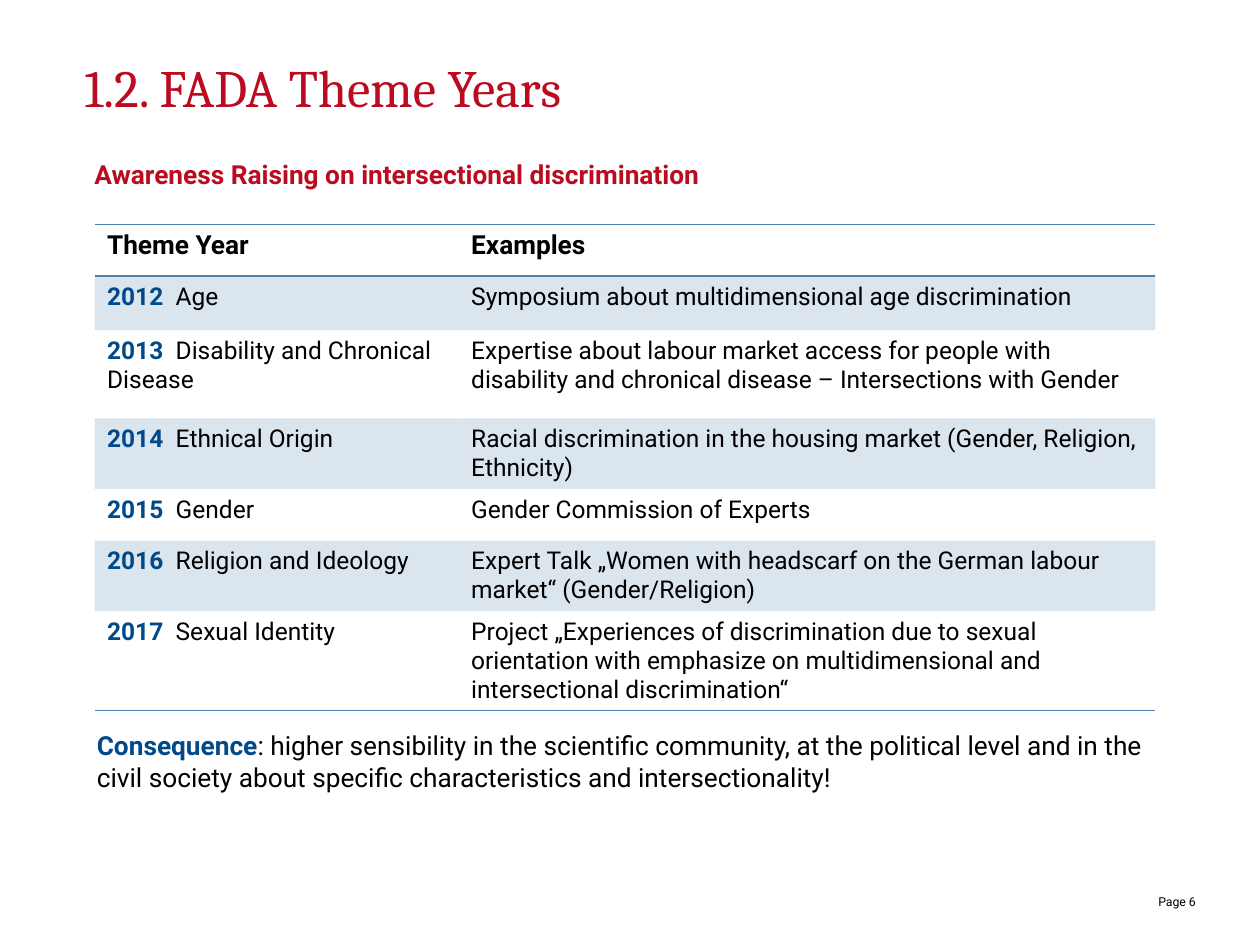
from dataclasses import dataclass
from typing import NamedTuple

from lxml.etree import SubElement
from pptx import Presentation
from pptx.dml.color import RGBColor as Rgb
from pptx.enum.text import MSO_ANCHOR as Anchor, MSO_AUTO_SIZE as AutoSize, PP_ALIGN as Align
from pptx.oxml.ns import qn
from pptx.util import Inches, Pt


@dataclass(frozen=True)
class Theme:
    red: str = "BB0B20"
    blue: str = "00498B"
    steel: str = "4D80AE"
    black: str = "000000"
    serif: str = "Cambria"
    sans: str = "Roboto"
    title: int = 30
    lead: int = 15
    cell: int = 14
    footer: int = 7
    band_alpha: int = 20
    rule: int = 1


class Span(NamedTuple):
    text: str
    size: int
    color: str
    bold: bool = False
    font: str = Theme.sans


class ThemeYear(NamedTuple):
    year: str
    topic: str
    example: str
    height: float


THEME = Theme()
NO_STYLE = "{2D5ABB26-0587-4C30-8999-92F81FD0307C}"
COLUMN_WIDTHS = (2.89, 5.53)
HEADER_HEIGHT = 0.41
YEARS = (
    ThemeYear("2012", "Age", "Symposium about multidimensional age discrimination", 0.43),
    ThemeYear("2013", "Disability and Chronical Disease",
              "Expertise about labour market access for people with disability and "
              "chronical disease – Intersections with Gender", 0.7),
    ThemeYear("2014", "Ethnical Origin",
              "Racial discrimination in the housing market (Gender, Religion, Ethnicity)", 0.53),
    ThemeYear("2015", "Gender", "Gender Commission of Experts", 0.41),
    ThemeYear("2016", "Religion and Ideology",
              "Expert Talk „Women with headscarf on the German labour market“ "
              "(Gender/Religion)", 0.43),
    ThemeYear("2017", "Sexual Identity",
              "Project „Experiences of discrimination due to sexual orientation with "
              "emphasize on multidimensional and intersectional discrimination“", 0.76),
)


def add_spans(para, *spans: Span) -> None:
    for span in spans:
        run = para.add_run()
        run.text = span.text
        run.font.name = span.font
        run.font.size = Pt(span.size)
        run.font.bold = span.bold
        run.font.color.rgb = Rgb.from_string(span.color)


def set_frame(frame, inset: float = 0, top: float = 0) -> None:
    frame.word_wrap = True
    frame.auto_size = AutoSize.NONE
    frame.vertical_anchor = Anchor.TOP
    frame.margin_left = frame.margin_right = Inches(inset)
    frame.margin_top = frame.margin_bottom = Inches(top)


def add_text(page, left: float, top: float, width: float, height: float,
             *spans: Span, inset: float = 0, inset_top: float = 0):
    box = page.shapes.add_textbox(Inches(left), Inches(top), Inches(width), Inches(height))
    set_frame(box.text_frame, inset, inset_top)
    para = box.text_frame.paragraphs[0]
    add_spans(para, *spans)
    return para


def add_border(cell, sides: str) -> None:
    """Draw rules on the given sides, T before B, ahead of the cell fill."""
    properties = cell._tc.get_or_add_tcPr()
    for position, side in enumerate(sides):
        line = SubElement(properties, qn(f"a:ln{side}"), w=str(Pt(THEME.rule)))
        fill = SubElement(line, qn("a:solidFill"))
        SubElement(fill, qn("a:srgbClr"), val=THEME.steel)
        properties.insert(position, line)


def shade(cell) -> None:
    cell.fill.solid()
    cell.fill.fore_color.rgb = Rgb.from_string(THEME.steel)
    color = cell._tc.tcPr.find(f".//{qn('a:srgbClr')}")
    SubElement(color, qn("a:alpha"), val=str(THEME.band_alpha * 1000))


def add_year_table(page) -> None:
    heights = [HEADER_HEIGHT] + [entry.height for entry in YEARS]
    frame = page.shapes.add_table(len(heights), len(COLUMN_WIDTHS), Inches(0.75), Inches(1.78),
                                  Inches(sum(COLUMN_WIDTHS)), Inches(sum(heights)))
    table = frame.table
    table.first_row = table.horz_banding = False
    table._tbl.tblPr.find(qn("a:tableStyleId")).text = NO_STYLE
    for column, width in zip(table.columns, COLUMN_WIDTHS):
        column.width = Inches(width)
    for row, height in zip(table.rows, heights):
        row.height = Inches(height)

    # Cell texts
    contents = [[[Span(heading, THEME.lead, THEME.black, True)]
                 for heading in ("Theme Year", "Examples")]]
    for entry in YEARS:
        contents.append([
            [Span(entry.year + " ", THEME.cell, THEME.blue, True),
             Span(" " + entry.topic, THEME.cell, THEME.black)],
            [Span(entry.example, THEME.cell, THEME.black)],
        ])

    # Banding and rules
    rules = {0: "TB", len(YEARS): "B"}
    for index, row in enumerate(contents):
        for column, spans in enumerate(row):
            cell = table.cell(index, column)
            add_spans(cell.text_frame.paragraphs[0], *spans)
            if index % 2:
                shade(cell)
            else:
                cell.fill.background()
            add_border(cell, rules.get(index, ""))


def main() -> None:
    deck = Presentation()
    deck.slide_width, deck.slide_height = Inches(10), Inches(7.5)
    page = deck.slides.add_slide(deck.slide_layouts.get_by_name("Title Only"))

    # Title
    title = page.shapes.title
    title.left, title.top = Inches(0.67), Inches(0.44)
    title.width, title.height = Inches(8.82), Inches(1.1)
    set_frame(title.text_frame)
    para = title.text_frame.paragraphs[0]
    para.alignment = Align.LEFT
    add_spans(para, Span("1.2. FADA Theme Years", THEME.title, THEME.red, font=THEME.serif))

    # Page number
    para = add_text(page, 8.48, 7.06, 1.01, 0.16,
                    Span("Page 6", THEME.footer, THEME.black), inset_top=0.04)
    para.alignment = Align.RIGHT

    # Subtitle
    para = add_text(page, 0.75, 1.23, 8.43, 4.41,
                    Span("Awareness Raising on intersectional discrimination",
                         THEME.lead, THEME.red, True))
    para.line_spacing = 1.1
    para.space_after = Pt(10)

    add_year_table(page)

    # Conclusion
    add_text(page, 0.67, 5.74, 8.58, 0.61,
             Span("Consequence", THEME.lead, THEME.blue, True),
             Span(": higher sensibility in the scientific community, at the political level "
                  "and in the civil society about specific characteristics and "
                  "intersectionality!", THEME.lead, THEME.black),
             inset=0.1, inset_top=0.05)

    deck.save("out.pptx")


if __name__ == "__main__":
    main()
